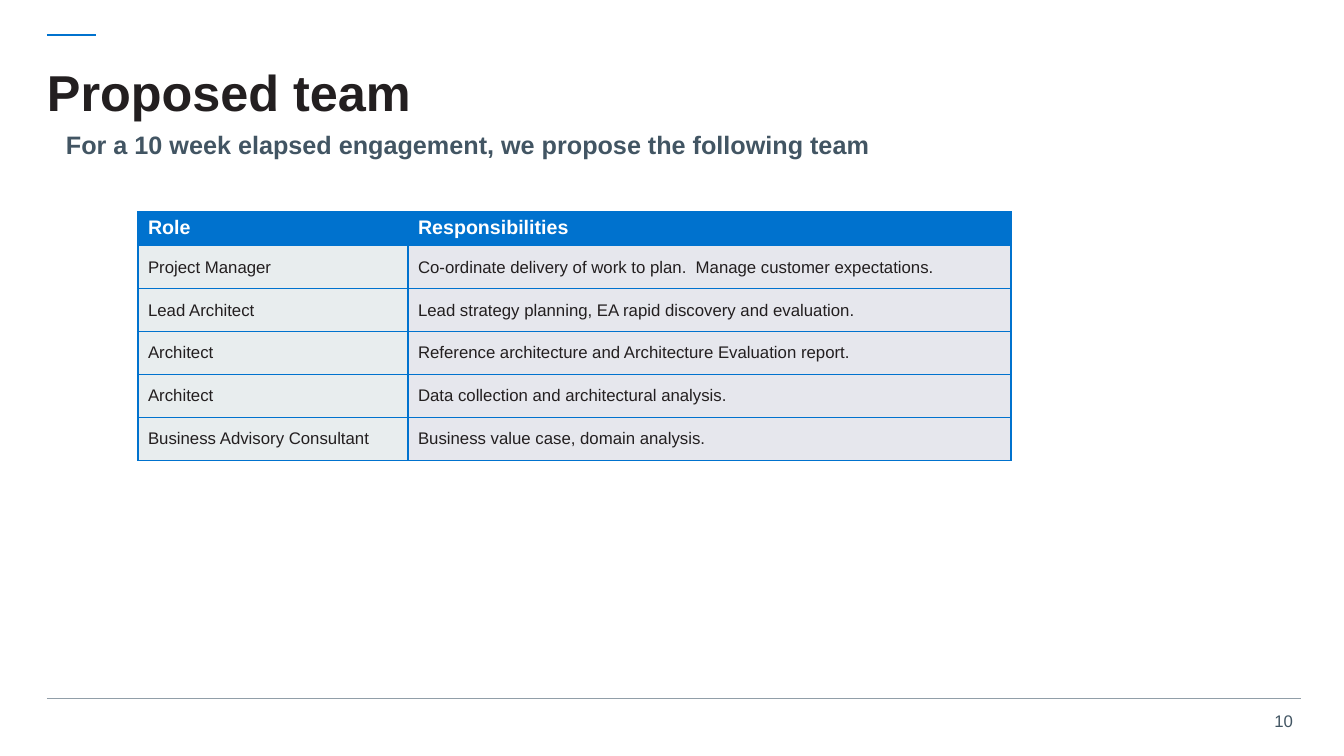
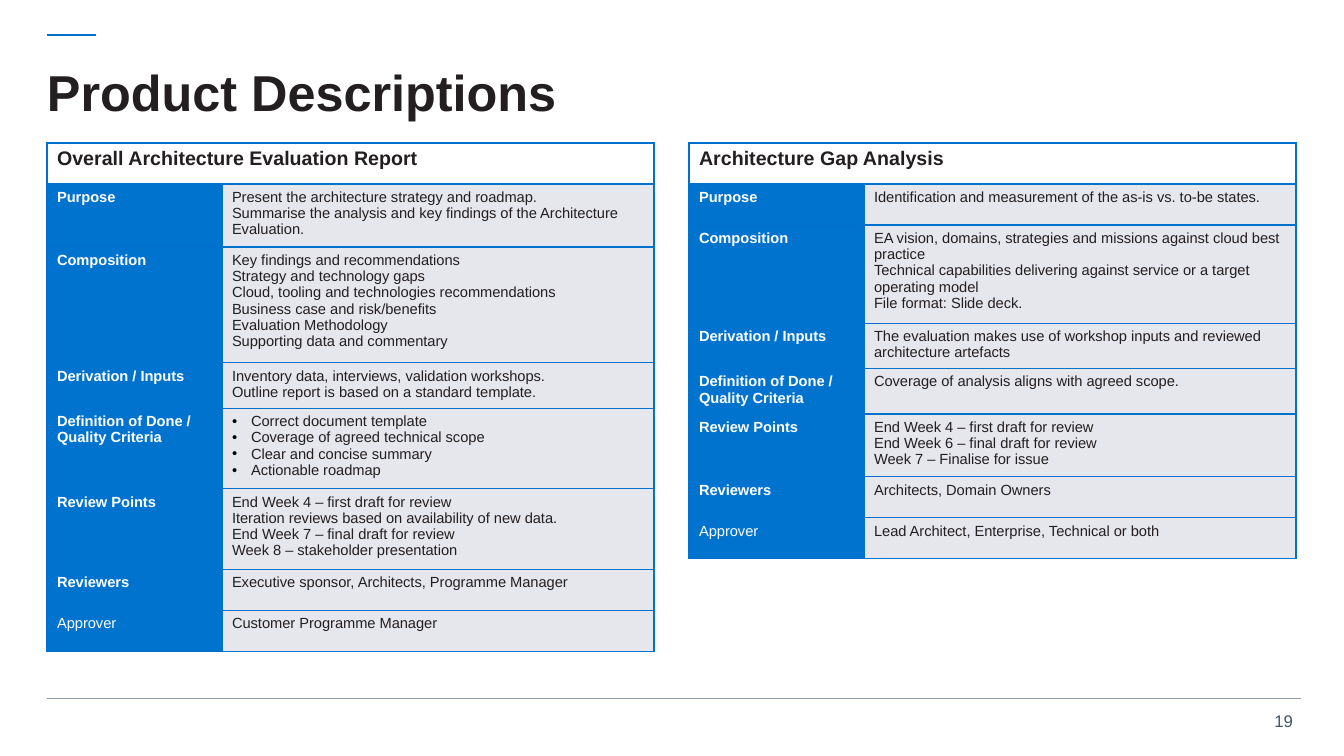
"""Build the proposed team and product description slides."""
import pptx
import pptx.dml.color
import pptx.enum.shapes
import pptx.enum.text
import pptx.oxml
import pptx.oxml.ns
import pptx.util
from lxml import etree

PX = 12192000 / 1344
FONT = "Arial"
COLORS = {
    "accent": "0072CE", "label": "0073CF", "ink": "231F20", "slate": "425563",
    "rule": "919EA8", "role": "E8EDEE", "detail": "E6E7ED", "white": "FFFFFF", "bullet": "000000",
}
NAMESPACE = 'xmlns:a="http://schemas.openxmlformats.org/drawingml/2006/main"'
TOP = pptx.enum.text.MSO_ANCHOR.TOP
MIDDLE = pptx.enum.text.MSO_ANCHOR.MIDDLE
LEFT = pptx.enum.text.PP_ALIGN.LEFT
RIGHT = pptx.enum.text.PP_ALIGN.RIGHT


def write_text(frame, text, size, color, bold=False, align=LEFT, spacing=None):
    """Write one paragraph per line, with a hanging bullet where a line starts with one."""
    for index, line in enumerate(text.split("\n")):
        paragraph = frame.add_paragraph() if index else frame.paragraphs[0]
        paragraph.text = line.removeprefix("•")
        paragraph.alignment = align
        if spacing:
            paragraph.line_spacing = spacing
        if line.startswith("•"):
            properties = paragraph._p.get_or_add_pPr()
            properties.set("marL", str(round(19 * PX)))
            properties.set("indent", str(round(-19 * PX)))
            for xml in (f'<a:buClr {NAMESPACE}><a:srgbClr val="{COLORS["bullet"]}"/></a:buClr>',
                        f'<a:buFont {NAMESPACE} typeface="{FONT}"/>',
                        f'<a:buChar {NAMESPACE} char="•"/>'):
                properties.append(pptx.oxml.parse_xml(xml))
        paragraph.font.name = FONT
        paragraph.font.size = pptx.util.Pt(size)
        paragraph.font.bold = bold
        paragraph.font.color.rgb = pptx.dml.color.RGBColor.from_string(COLORS[color])


def style_cell(cell, text, size, color, bold, fill, anchor=TOP):
    """Fill a table cell with text, accent borders and a background."""
    write_text(cell.text_frame, text, size, color, bold)
    cell.vertical_anchor = anchor
    for side in ("lnL", "lnR", "lnT", "lnB"):
        cell._tc.get_or_add_tcPr().append(pptx.oxml.parse_xml(
            f'<a:{side} {NAMESPACE} w="12700"><a:solidFill>'
            f'<a:srgbClr val="{COLORS["accent"]}"/></a:solidFill></a:{side}>'))
    cell.fill.solid()
    cell.fill.fore_color.rgb = pptx.dml.color.RGBColor.from_string(COLORS[fill])


team = [
    ("Project Manager", "Co-ordinate delivery of work to plan.  Manage customer expectations."),
    ("Lead Architect", "Lead strategy planning, EA rapid discovery and evaluation."),
    ("Architect", "Reference architecture and Architecture Evaluation report."),
    ("Architect", "Data collection and architectural analysis."),
    ("Business Advisory Consultant", "Business value case, domain analysis."),
]
product_labels = ["Purpose", "Composition", "Derivation / Inputs", "Definition of Done / Quality Criteria",
                  "Review Points", "Reviewers", "Approver"]
products = {
    "Overall Architecture Evaluation Report": [
        "Present the architecture strategy and roadmap.\n"
        "Summarise the analysis and key findings of the Architecture Evaluation.",
        "Key findings and recommendations\nStrategy and technology gaps\n"
        "Cloud, tooling and technologies recommendations\nBusiness case and risk/benefits\n"
        "Evaluation Methodology\nSupporting data and commentary",
        "Inventory data, interviews, validation workshops.\n"
        "Outline report is based on a standard template.",
        "•Correct document template\n•Coverage of agreed technical scope\n"
        "•Clear and concise summary\n•Actionable roadmap",
        "End Week 4 – first draft for review\nIteration reviews based on availability of new data.\n"
        "End Week 7 – final draft for review\nWeek 8 – stakeholder presentation",
        "Executive sponsor, Architects, Programme Manager",
        "Customer Programme Manager",
    ],
    "Architecture Gap Analysis": [
        "Identification and measurement of the as-is vs. to-be states.",
        "EA vision, domains, strategies and missions against cloud best practice\n"
        "Technical capabilities delivering against service or a target operating model\n"
        "File format: Slide deck.",
        "The evaluation makes use of workshop inputs and reviewed architecture artefacts",
        "Coverage of analysis aligns with agreed scope.",
        "End Week 4 – first draft for review\nEnd Week 6 – final draft for review\n"
        "Week 7 – Finalise for issue",
        "Architects, Domain Owners",
        "Lead Architect, Enterprise, Technical or both",
    ],
}

presentation = pptx.Presentation()
presentation.slide_width = round(1344 * PX)
presentation.slide_height = round(756 * PX)

slides = []
for title, number in (("Proposed team", "10"), ("Product Descriptions", "19")):
    slide = presentation.slides.add_slide(presentation.slide_layouts[6])
    slides.append(slide)
    for right, y, color, width in ((96, 35, "accent", 2), (1301, 699, "rule", 0.75)):
        line = slide.shapes.add_connector(
            pptx.enum.shapes.MSO_CONNECTOR.STRAIGHT,
            *(round(value * PX) for value in (47, y, right, y)))
        line.line.color.rgb = pptx.dml.color.RGBColor.from_string(COLORS[color])
        line.line.width = pptx.util.Pt(width)
        etree.SubElement(line._element.spPr, pptx.oxml.ns.qn("a:effectLst"))
    texts = [
        (title, (47, 47, 1257, 96), 36, "ink", True, LEFT, 0.9, MIDDLE, (0, 0)),
        (number, (1262, 706, 41, 30), 12, "slate", False, RIGHT, None, TOP, (10, 5)),
    ]
    if slide is slides[0]:
        texts.append(("For a 10 week elapsed engagement, we propose the following team",
                      (66, 132, 1200, 51), 18, "slate", True, LEFT, 0.92, TOP, (0, 0)))
    for text, box, size, color, bold, align, spacing, anchor, (inset_x, inset_y) in texts:
        frame = slide.shapes.add_textbox(*(round(value * PX) for value in box)).text_frame
        frame.word_wrap = True
        frame.vertical_anchor = anchor
        frame.margin_left = frame.margin_right = round(inset_x * PX)
        frame.margin_top = frame.margin_bottom = round(inset_y * PX)
        write_text(frame, text, size, color, bold, align, spacing)

team_slide, product_slide = slides
tables = []
for slide, left, top, columns, heights in (
        (team_slide, 138, 212, (270, 603), [32] + [43] * len(team)),
        (product_slide, 47, 143, (175, 432), [41] * 8),
        (product_slide, 689, 143, (175, 432), [41] * 8)):
    table = slide.shapes.add_table(
        len(heights), len(columns),
        *(round(value * PX) for value in (left, top, sum(columns), sum(heights)))).table
    table.first_row = table.horz_banding = False
    for column, width in zip(table.columns, columns):
        column.width = round(width * PX)
    for row, height in zip(table.rows, heights):
        row.height = round(height * PX)
    tables.append(table)

team_table, *product_tables = tables
for column, heading in enumerate(("Role", "Responsibilities")):
    style_cell(team_table.cell(0, column), heading, 14, "white", True, "accent")
for row, member in enumerate(team, 1):
    for column, fill in enumerate(("role", "detail")):
        style_cell(team_table.cell(row, column), member[column], 12, "ink", False, fill, MIDDLE)

for table, (heading, details) in zip(product_tables, products.items()):
    table.cell(0, 0).merge(table.cell(0, 1))
    for column, text in enumerate((heading, "")):
        style_cell(table.cell(0, column), text, 14, "ink", True, "white")
    for row, (label, detail) in enumerate(zip(product_labels, details), 1):
        style_cell(table.cell(row, 0), label, 10.5, "white", label != "Approver", "label")
        style_cell(table.cell(row, 1), detail, 10.5, "ink", False, "detail")

presentation.save("out.pptx")
